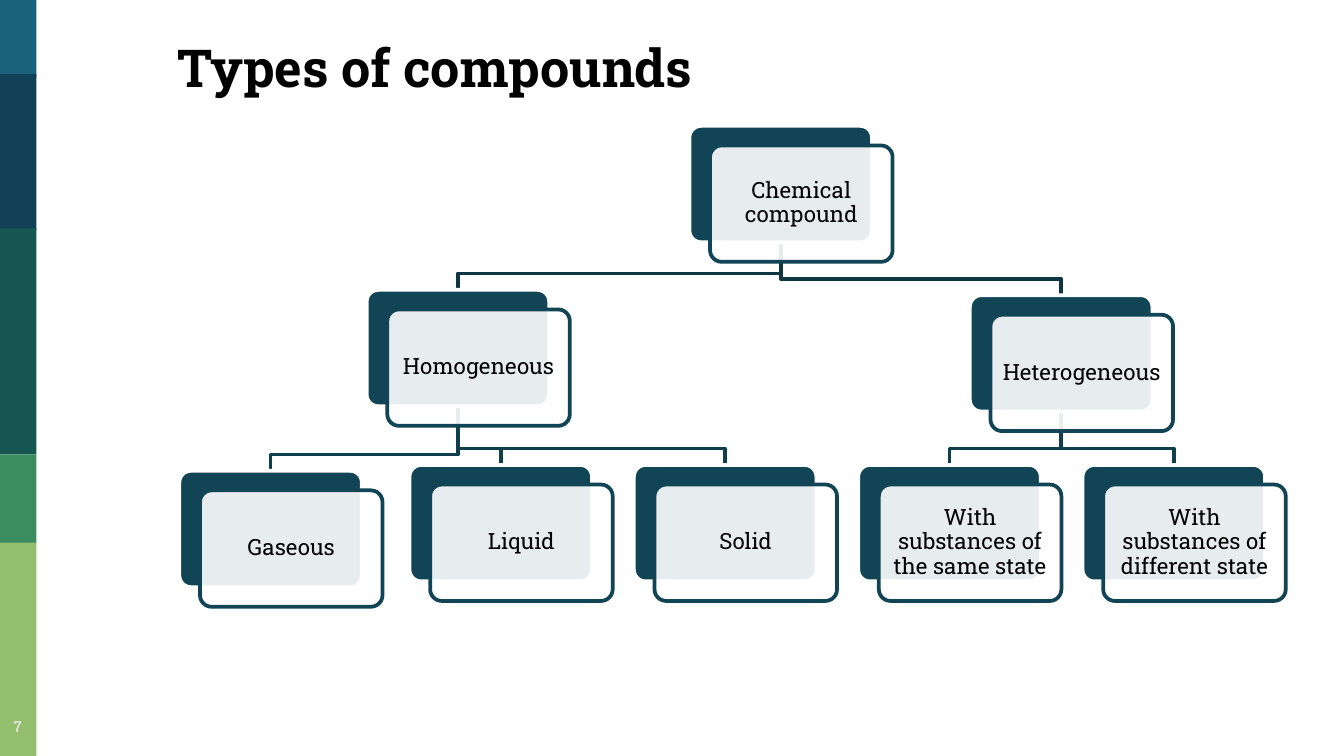
from lxml import etree
from pptx import Presentation
from pptx.dml.color import RGBColor
from pptx.enum import shapes, text
from pptx.oxml import ns
from pptx.util import Cm, Pt

CARD_W, CARD_H = 3.45, 2.2
SHIFT_X, SHIFT_Y = 0.39, 0.37
ELBOW_GAP = 0.31
LEAF_X, LEAF_Y, LEAF_STEP = 7.74, 8.79, 4.24

# Sidebar bands: top, height, colour
BANDS = [
    (0, 1.47, "18637B"),
    (1.4, 2.95, "124057"),
    (4.32, 4.27, "165751"),
    (8.59, 1.68, "3B8D61"),
    (10.26, 4.03, "94BF6E"),
]

# Cards: left, top, label
CARDS = {
    "root": (13.03, 2.38, "Chemical compound"),
    "homogeneous": (6.93, 5.48, "Homogeneous"),
    "gaseous": (3.39, 8.9, "Gaseous"),
    "heterogeneous": (18.33, 5.58, "Heterogeneous"),
}
LEAVES = {
    "liquid": "Liquid",
    "solid": "Solid",
    "same": "With substances of the same state",
    "different": "With substances of different state",
}
for i, (key, label) in enumerate(LEAVES.items()):
    CARDS[key] = (LEAF_X + i * LEAF_STEP, LEAF_Y, label)

# Parent, children, line colour
BRANCHES = [
    ("heterogeneous", ("different", "same"), "0F3E4C"),
    ("root", ("heterogeneous", "homogeneous"), "0E3643"),
    ("homogeneous", ("solid", "liquid", "gaseous"), "0F3E4C"),
]


def rgb(value):
    return RGBColor.from_string(value)


class Deck:
    font = "Roboto Slab"
    dark = "114454"
    line_width = Pt(2)

    def __init__(self, width, height):
        self.prs = Presentation()
        self.prs.slide_width, self.prs.slide_height = Cm(width), Cm(height)
        self.s = self.prs.slides.add_slide(self.prs.slide_layouts[6])

    def box(self, x, y, w, h, fill, line=None, rounded=False):
        kind = shapes.MSO_SHAPE.RECTANGLE
        if rounded:
            kind = shapes.MSO_SHAPE.ROUNDED_RECTANGLE
        sp = self.s.shapes.add_shape(kind, Cm(x), Cm(y), Cm(w), Cm(h))
        sp.shadow.inherit = False
        sp.fill.solid()
        sp.fill.fore_color.rgb = rgb(fill)
        if rounded:
            sp.adjustments[0] = 0.1
        if line:
            sp.line.color.rgb = rgb(line)
            sp.line.width = self.line_width
        else:
            sp.line.fill.background()
        return sp

    def set_text(self, tf, words, size, color="000000", bold=False,
                 align=text.PP_ALIGN.LEFT):
        p = tf.paragraphs[0]
        p.text = words
        p.alignment = align
        p.font.name, p.font.size, p.font.bold = self.font, Pt(size), bold
        p.font.color.rgb = rgb(color)
        return p

    def label(self, x, y, w, h, words, size, wrap=True, inset=0.25, **style):
        tf = self.s.shapes.add_textbox(Cm(x), Cm(y), Cm(w), Cm(h)).text_frame
        tf.word_wrap = wrap
        tf.margin_top = tf.margin_bottom = Cm(inset)
        self.set_text(tf, words, size, **style)

    def card(self, x, y, words):
        """Dark plate with a translucent, outlined text plate over it."""
        self.box(x, y, CARD_W, CARD_H, self.dark, "FFFFFF", rounded=True)
        sp = self.box(x + SHIFT_X, y + SHIFT_Y, CARD_W, CARD_H,
                      "FFFFFF", self.dark, rounded=True)
        fill = sp.element.spPr.find(ns.qn("a:solidFill"))
        etree.SubElement(fill[0], ns.qn("a:alpha"), val="90000")
        tf = sp.text_frame
        tf.word_wrap = True
        tf.vertical_anchor = text.MSO_ANCHOR.MIDDLE
        tf.margin_left = tf.margin_right = Cm(0.13)
        tf.margin_top = tf.margin_bottom = Cm(0.13)
        p = self.set_text(tf, words, 12, align=text.PP_ALIGN.CENTER)
        p.line_spacing = 0.9

    def link(self, parent, child, color):
        """Elbow line from the parent's bottom centre to the child's top."""
        x1, y1 = parent[0] + CARD_W / 2, parent[1] + CARD_H
        x2, y2 = child[0] + CARD_W / 2, child[1]
        bend = y2 - ELBOW_GAP
        corners = [(Cm(x), Cm(y)) for x, y in
                   ((x1, bend), (x2, bend), (x2, y2))]
        builder = self.s.shapes.build_freeform(Cm(x1), Cm(y1))
        builder.add_line_segments(corners, close=False)
        sp = builder.convert_to_shape()
        sp.shadow.inherit = False
        sp.fill.background()
        sp.line.color.rgb = rgb(color)
        sp.line.width = self.line_width


def main():
    deck = Deck(25.4, 14.29)
    for top, height, color in BANDS:
        deck.box(0, top, 0.69, height, color)
    deck.label(-0.15, 13.39, 0.97, 0.89, "7", 8, color="FFFFFF",
               align=text.PP_ALIGN.CENTER)
    for parent, children, color in BRANCHES:
        for child in children:
            deck.link(CARDS[parent], CARDS[child], color)
    for card in CARDS.values():
        deck.card(*card)
    deck.label(3.1, 0.53, 10.39, 1.45, "Types of compounds", 28,
               wrap=False, inset=0.13, bold=True)
    deck.prs.save("out.pptx")


if __name__ == "__main__":
    main()
